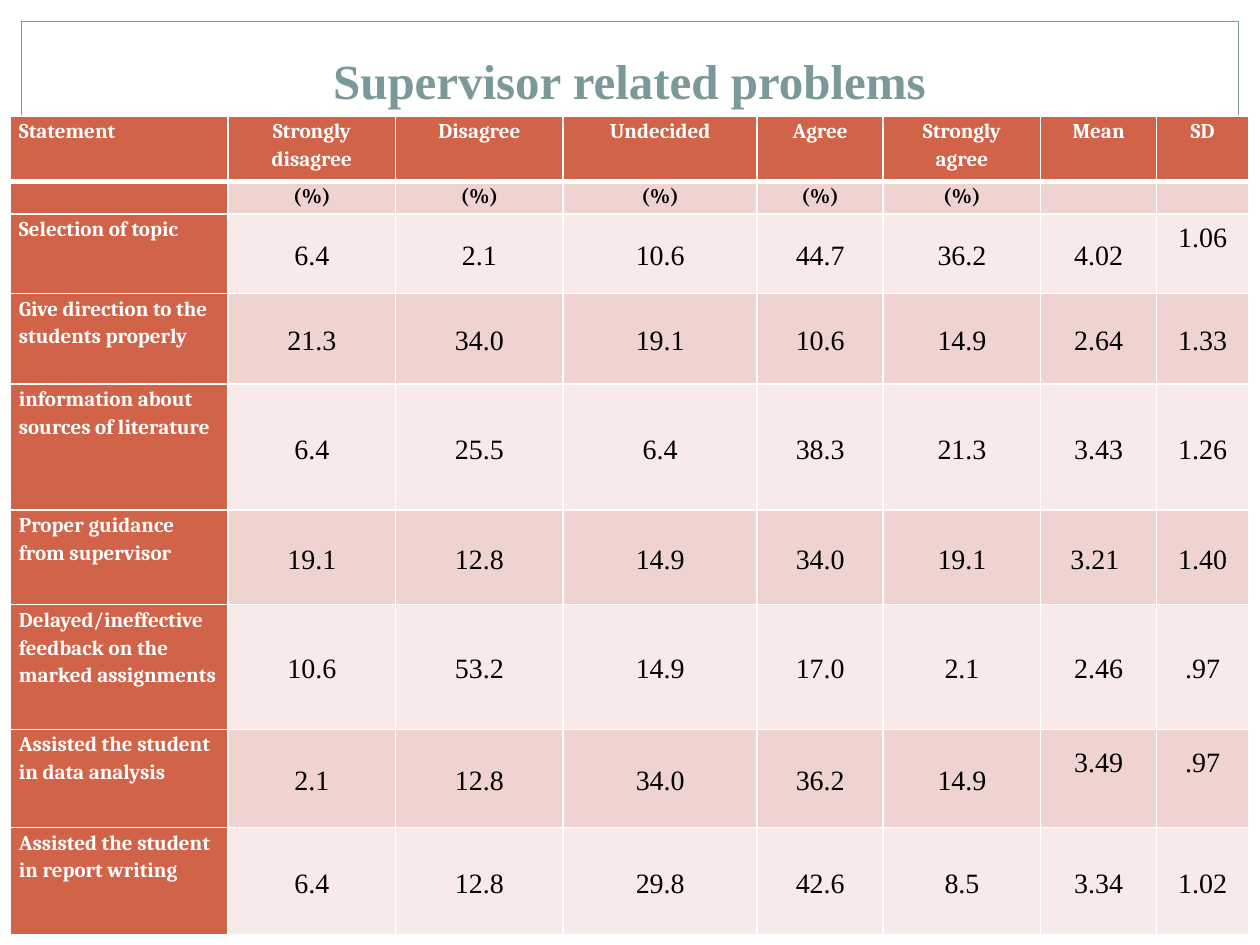
"""Build a slide with a survey table on supervisor related problems."""
import pptx
import pptx.util
import pptx.dml.color
import pptx.enum.shapes
import pptx.enum.text
import pptx.oxml
import pptx.oxml.ns

Inches, Pt = pptx.util.Inches, pptx.util.Pt
RGBColor = pptx.dml.color.RGBColor
PP_ALIGN, MSO_ANCHOR = pptx.enum.text.PP_ALIGN, pptx.enum.text.MSO_ANCHOR

TITLE = "Supervisor related problems"
HEADER = ["Statement", "Strongly\ndisagree", "Disagree", "Undecided", "Agree",
          "Strongly\nagree", "Mean", "SD"]
UNITS = [""] + ["(%)"] * 5 + ["", ""]
RESULTS = [
    ["Selection of topic", "6.4", "2.1", "10.6", "44.7", "36.2", "4.02", "1.06"],
    ["Give direction to the students properly",
     "21.3", "34.0", "19.1", "10.6", "14.9", "2.64", "1.33"],
    ["information about sources of literature",
     "6.4", "25.5", "6.4", "38.3", "21.3", "3.43", "1.26"],
    ["Proper guidance from supervisor",
     "19.1", "12.8", "14.9", "34.0", "19.1", "3.21", "1.40"],
    ["Delayed/ineffective feedback on the marked assignments",
     "10.6", "53.2", "14.9", "17.0", "2.1", "2.46", ".97"],
    ["Assisted the student in data analysis",
     "2.1", "12.8", "34.0", "36.2", "14.9", "3.49", ".97"],
    ["Assisted the student in report writing",
     "6.4", "12.8", "29.8", "42.6", "8.5", "3.34", "1.02"],
]
ROWS = [HEADER, UNITS] + RESULTS
COL_WIDTHS = [1.73, 1.33, 1.33, 1.54, 1, 1.25, 0.92, 0.73]
ROW_HEIGHTS = [0.52, 0.26, 0.63, 0.72, 1, 0.75, 0.99, 0.78, 0.85]
RAISED = {(2, 7), (7, 6), (7, 7)}
SHIFTED_LEFT = {(5, 6)}
BANDS = [(0, 7.33, 10, 0.17), (0, 0, 10, 1.52), (0, 0, 0.17, 7.5), (9.83, 0, 0.17, 7.5)]
FRAME = (0.17, 0.17, 9.66, 7.16)

WHITE = RGBColor(0xFF, 0xFF, 0xFF)
BLACK = RGBColor(0, 0, 0)
BACKGROUND = RGBColor(0xC5, 0xD1, 0xD7)
TEAL = RGBColor(0x7C, 0x99, 0x9A)
RUST = RGBColor(0xD1, 0x63, 0x49)
PINK = RGBColor(0xEE, 0xD3, 0xD0)
PALE = RGBColor(0xF7, 0xEA, 0xE9)


def add_rect(s, box, fill=None, line=None):
    sp = s.shapes.add_shape(pptx.enum.shapes.MSO_SHAPE.RECTANGLE, *map(Inches, box))
    sp.shadow.inherit = False
    if fill is None:
        sp.fill.background()
    else:
        sp.fill.solid()
        sp.fill.fore_color.rgb = fill
    if line is None:
        sp.line.fill.background()
    else:
        sp.line.color.rgb = line
        sp.line.width = Pt(0.75)


def format_runs(p, name, size, color, bold):
    for r in p.runs:
        r.font.name, r.font.size, r.font.bold = name, Pt(size), bold
        r.font.color.rgb = color


def set_borders(cell, row):
    tc_pr = cell._tc.get_or_add_tcPr()
    for i, side in enumerate("LRTB"):
        width = 3 if (row, side) in {(0, "B"), (1, "T")} else 1
        tc_pr.insert(i, pptx.oxml.parse_xml(
            f'<a:ln{side} {pptx.oxml.ns.nsdecls("a")} w="{Pt(width)}"><a:solidFill>'
            f'<a:srgbClr val="{WHITE}"/></a:solidFill></a:ln{side}>'))


def fill_cell(cell, row, col, text):
    label = row == 0 or col == 0
    number = row > 1 and col > 0
    cell.fill.solid()
    cell.fill.fore_color.rgb = RUST if label else PINK if row % 2 else PALE
    cell.margin_left = Inches(0.07)
    cell.margin_right = Inches(0.13 if (row, col) in SHIFTED_LEFT else 0.07)
    cell.margin_top = 0
    cell.margin_bottom = Inches(0.29 if (row, col) in RAISED else 0)
    cell.vertical_anchor = MSO_ANCHOR.MIDDLE if number else MSO_ANCHOR.TOP
    cell.text_frame.text = text
    for p in cell.text_frame.paragraphs:
        p.alignment = PP_ALIGN.CENTER if col else PP_ALIGN.LEFT
        p.line_spacing = 1.15
        if number:
            format_runs(p, "Times New Roman", 16, BLACK, False)
        else:
            format_runs(p, "Cambria", 12, WHITE if label else BLACK, True)
        if not text:
            p._p.get_or_add_endParaRPr().set("sz", "1200")
    set_borders(cell, row)


def add_title(s):
    title = s.shapes.title
    title.left, title.top, title.width, title.height = map(Inches, (0.33, 0.17, 9.33, 0.75))
    tf = title.text_frame
    tf.text = TITLE
    tf.vertical_anchor = MSO_ANCHOR.BOTTOM
    p = tf.paragraphs[0]
    p.alignment = PP_ALIGN.CENTER
    format_runs(p, "Times New Roman", 28, TEAL, True)
    s.shapes._spTree.append(title._element)


def add_results(s):
    table = s.shapes.add_table(len(ROWS), len(HEADER), Inches(0.08), Inches(0.92),
                               Inches(sum(COL_WIDTHS)), Inches(sum(ROW_HEIGHTS))).table
    for column, width in zip(table.columns, COL_WIDTHS):
        column.width = Inches(width)
    for row, height in zip(table.rows, ROW_HEIGHTS):
        row.height = Inches(height)
    for i, texts in enumerate(ROWS):
        for j, text in enumerate(texts):
            fill_cell(table.cell(i, j), i, j, text)


def main():
    prs = pptx.Presentation()
    prs.slide_width, prs.slide_height = Inches(10), Inches(7.5)
    s = prs.slides.add_slide(prs.slide_layouts[5])
    s.background.fill.solid()
    s.background.fill.fore_color.rgb = BACKGROUND
    for band in BANDS:
        add_rect(s, band, fill=WHITE)
    add_rect(s, FRAME, line=TEAL)
    add_title(s)
    add_results(s)
    prs.save("out.pptx")


if __name__ == "__main__":
    main()
